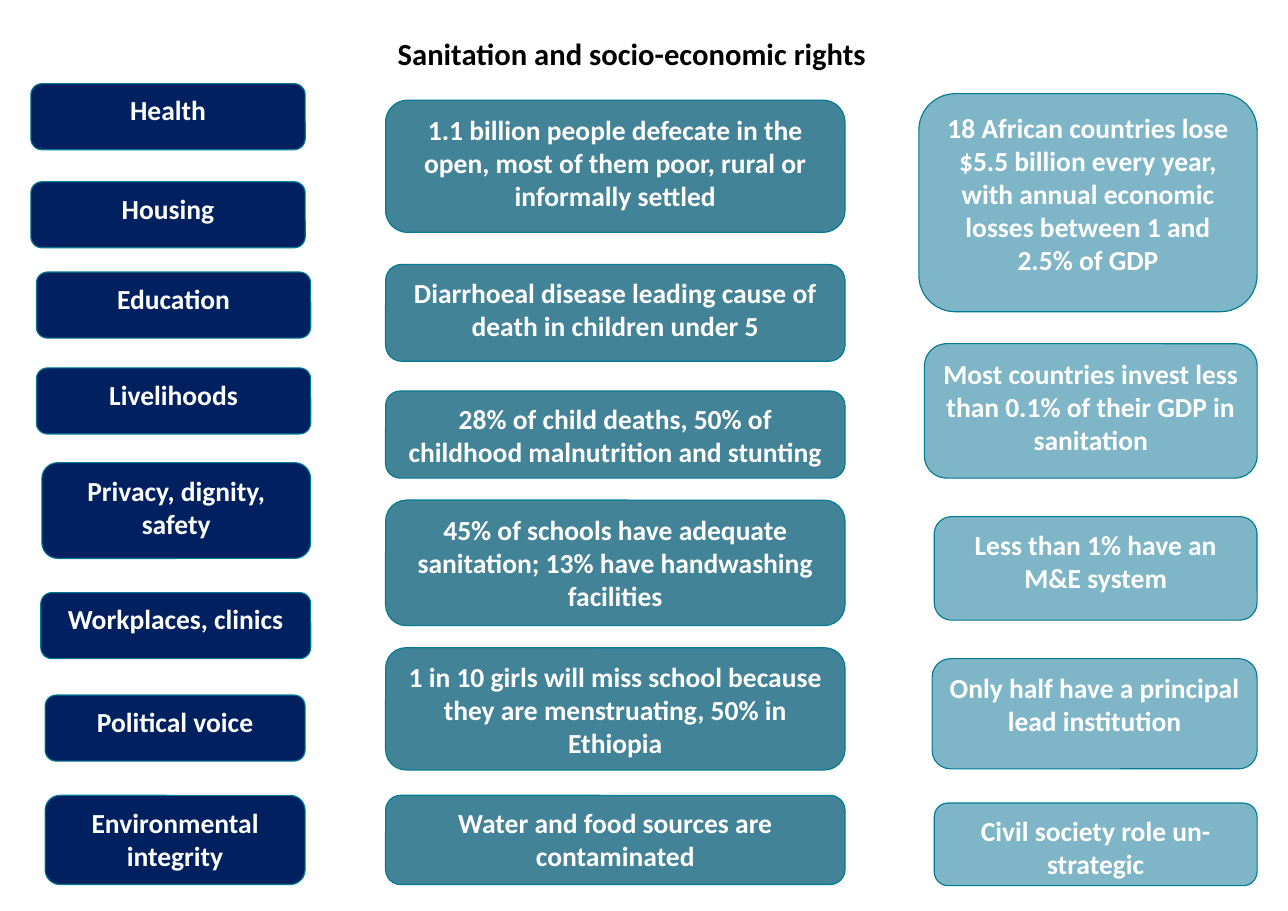
from pptx import Presentation
from pptx.dml.color import RGBColor
from pptx.enum.shapes import MSO_SHAPE
from pptx.enum.text import MSO_ANCHOR, PP_ALIGN
from pptx.util import Inches, Pt

COLORS = {
    "right": "002060",
    "fact": "428397",
    "cost": "7EB6C7",
    "outline": "007B94",
    "title": "000000",
    "label": "FFFFFF",
}
FRAME_FORMAT = {
    "word_wrap": True,
    "vertical_anchor": MSO_ANCHOR.TOP,
    "margin_left": Inches(0.11),
    "margin_right": Inches(0.11),
    "margin_top": Inches(0.06),
    "margin_bottom": Inches(0.06),
}

# Each card: left inset, right inset, top offset, height, text
RIGHTS = [
    (0, 0.05, 0, 0.6, "Health"),
    (0, 0.05, 0.89, 0.6, "Housing"),
    (0.05, 0, 1.71, 0.6, "Education"),
    (0.05, 0, 2.58, 0.6, "Livelihoods"),
    (0.1, 0, 3.44, 0.87, "Privacy, dignity, safety"),
    (0.09, 0, 4.62, 0.6, "Workplaces, clinics"),
    (0.13, 0.05, 5.55, 0.6, "Political voice"),
    (0.13, 0.05, 6.46, 0.81, "Environmental integrity"),
]
FACTS = [
    (0, 0, 0, 1.2, "1.1 billion people defecate in the open, most of them poor, "
                   "rural or informally settled"),
    (0, 0, 1.49, 0.88, "Diarrhoeal disease leading cause of death in children under 5"),
    (0, 0, 2.64, 0.79, "28% of child deaths, 50% of childhood malnutrition and stunting"),
    (0, 0, 3.63, 1.14, "45% of schools have adequate sanitation; "
                       "13% have handwashing facilities"),
    (0, 0, 4.97, 1.11, "1 in 10 girls will miss school because they are menstruating, "
                       "50% in Ethiopia"),
    (0, 0, 6.31, 0.81, "Water and food sources are contaminated"),
]
COSTS = [
    (0, 0, 0, 1.98, "18 African countries lose $5.5 billion every year, "
                    "with annual economic losses between 1 and 2.5% of GDP"),
    (0.05, 0, 2.27, 1.22, "Most countries invest less than 0.1% of their GDP in sanitation"),
    (0.14, 0, 3.84, 0.94, "Less than 1% have an M&E system"),
    (0.12, 0, 5.13, 1, "Only half have a principal lead institution"),
    (0.14, 0, 6.44, 0.75, "Civil society role un-strategic"),
]


def color(name):
    return RGBColor.from_string(COLORS[name])


def write_text(shape, text, size, color_name):
    frame = shape.text_frame
    for name, value in FRAME_FORMAT.items():
        setattr(frame, name, value)
    paragraph = frame.paragraphs[0]
    paragraph.alignment = PP_ALIGN.CENTER
    run = paragraph.add_run()
    run.text = text
    font_format = {"name": "Calibri", "size": Pt(size), "bold": True}
    for name, value in font_format.items():
        setattr(run.font, name, value)
    run.font.color.rgb = color(color_name)


def add_title(slide, box, text):
    shape = slide.shapes.add_textbox(*map(Inches, box))
    write_text(shape, text, 20, "title")


def add_column(slide, box, fill, cards):
    left, top, width = box
    for left_inset, right_inset, offset, height, text in cards:
        shape = slide.shapes.add_shape(
            MSO_SHAPE.ROUNDED_RECTANGLE,
            Inches(left + left_inset),
            Inches(top + offset),
            Inches(width - left_inset - right_inset),
            Inches(height),
        )
        shape.shadow.inherit = False
        shape.fill.solid()
        shape.fill.fore_color.rgb = color(fill)
        shape.line.color.rgb = color("outline")
        shape.line.width = Pt(0.75)
        write_text(shape, text, 18, "label")


def main():
    presentation = Presentation()
    presentation.slide_width = Inches(11.69)
    presentation.slide_height = Inches(8.27)
    slide = presentation.slides.add_slide(presentation.slide_layouts[6])
    add_title(slide, (1.81, 0.26, 7.85, 0.45), "Sanitation and socio-economic rights")
    add_column(slide, (0.28, 0.76, 2.54), "right", RIGHTS)
    add_column(slide, (3.5, 0.91, 4.17), "fact", FACTS)
    add_column(slide, (8.34, 0.85, 3.07), "cost", COSTS)
    presentation.save("out.pptx")


if __name__ == "__main__":
    main()
